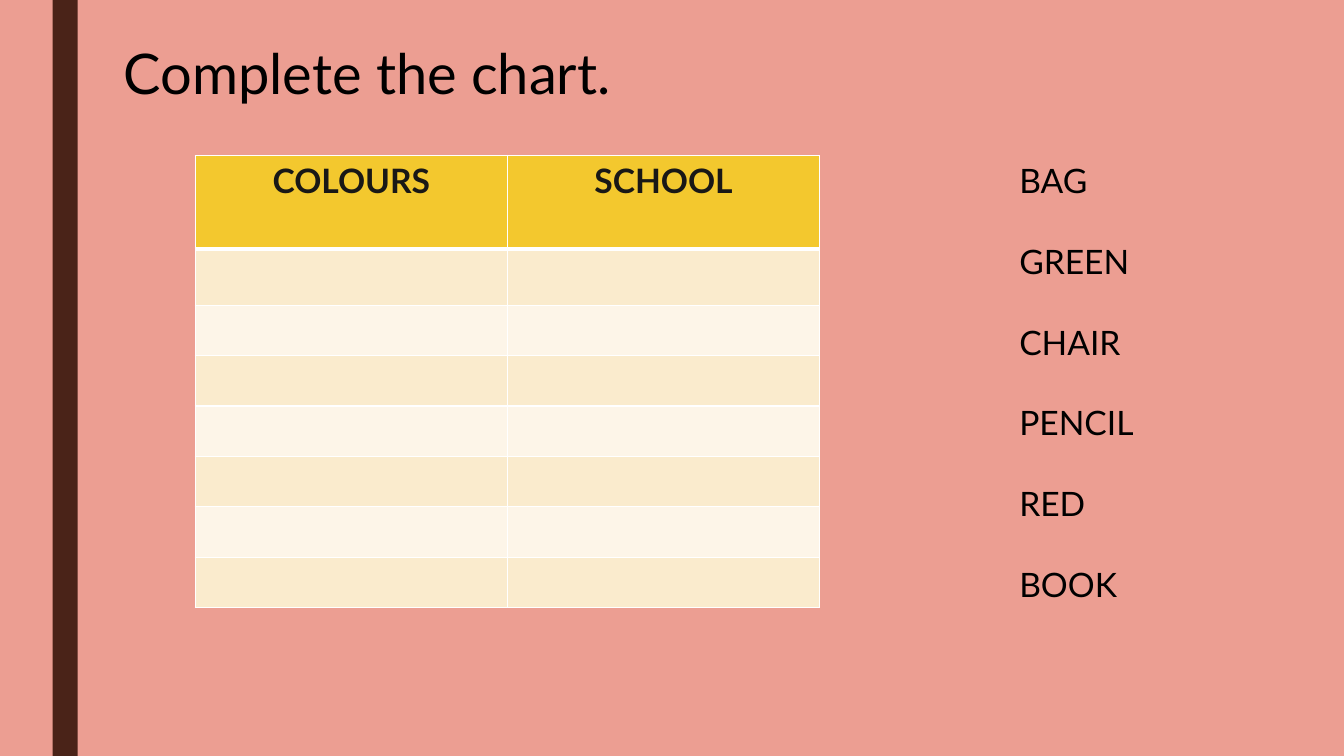
from dataclasses import dataclass

from lxml import etree
from pptx import Presentation
from pptx import util as u
from pptx.dml.color import RGBColor
from pptx.enum import shapes, text
from pptx.oxml.ns import qn

PINK = RGBColor(0xEC, 0x9E, 0x92)
BROWN = RGBColor(0x4A, 0x23, 0x18)
BLACK = RGBColor(0x00, 0x00, 0x00)
INK = RGBColor(0x19, 0x18, 0x16)
WHITE = RGBColor(0xFF, 0xFF, 0xFF)
YELLOW = RGBColor(0xF3, 0xC8, 0x2E)
BANDS = (RGBColor(0xFD, 0xF5, 0xE8), RGBColor(0xFA, 0xEB, 0xCD))

FONT = "Lato"
HEADINGS = ("COLOURS", "SCHOOL")
WORDS = ("BAG", "GREEN", "CHAIR", "PENCIL", "RED", "BOOK")
ROW_HEIGHTS = (67, 40) + (36,) * 6
COLUMN_WIDTH = 223


@dataclass(frozen=True)
class Box:
    left: float
    top: float
    width: float
    height: float

    def lengths(self) -> list:
        return [u.Pt(value) for value in (self.left, self.top, self.width, self.height)]


def write(frame, lines, *, size=24, colour=BLACK, bold=False,
          align=text.PP_ALIGN.LEFT, gap=0) -> None:
    """Put one paragraph per line into the frame, with a gap between them."""
    frame.word_wrap = True
    for index, line in enumerate(lines):
        paragraph = frame.add_paragraph() if index else frame.paragraphs[0]
        paragraph.alignment = align
        if index and gap:
            paragraph.space_before = u.Pt(gap)
        run = paragraph.add_run()
        run.text = line
        run.font.name = FONT
        run.font.size = u.Pt(size)
        run.font.bold = bold
        run.font.color.rgb = colour


def add_text(slide, box: Box, lines, **style) -> None:
    write(slide.shapes.add_textbox(*box.lengths()).text_frame, lines, **style)


def set_borders(cell, **widths: float) -> None:
    """Draw white cell borders; keywords L, R, T and B override one point."""
    properties = cell._tc.get_or_add_tcPr()
    for side in "LRTB":
        line = etree.SubElement(properties, qn(f"a:ln{side}"),
                                w=str(u.Pt(widths.get(side, 1))))
        fill = etree.SubElement(line, qn("a:solidFill"))
        etree.SubElement(fill, qn("a:srgbClr"), val=str(WHITE))


def add_chart_table(slide, left: float, top: float) -> None:
    box = Box(left, top, COLUMN_WIDTH * len(HEADINGS), sum(ROW_HEIGHTS))
    table = slide.shapes.add_table(len(ROW_HEIGHTS), len(HEADINGS), *box.lengths()).table
    for column in table.columns:
        column.width = u.Pt(COLUMN_WIDTH)
    for index, height in enumerate(ROW_HEIGHTS):
        table.rows[index].height = u.Pt(height)
        for cell in table.rows[index].cells:
            # The rule under the header is shared by the first two rows
            set_borders(cell, **{0: {"B": 3}, 1: {"T": 3}}.get(index, {}))
            cell.fill.solid()
            cell.fill.fore_color.rgb = BANDS[index % 2] if index else YELLOW
    for cell, heading in zip(table.rows[0].cells, HEADINGS):
        write(cell.text_frame, [heading], colour=INK, bold=True,
              align=text.PP_ALIGN.CENTER)


def main() -> None:
    presentation = Presentation()
    presentation.slide_width, presentation.slide_height = u.Pt(960), u.Pt(540)
    slide = presentation.slides.add_slide(presentation.slide_layouts[6])

    # Background and side stripe
    slide.background.fill.solid()
    slide.background.fill.fore_color.rgb = PINK
    stripe = slide.shapes.add_shape(shapes.MSO_SHAPE.RECTANGLE,
                                    *Box(37.5, 0, 18, 540).lengths())
    stripe.shadow.inherit = False
    stripe.fill.solid()
    stripe.fill.fore_color.rgb = BROWN
    stripe.line.fill.background()

    # Title, table and word list
    add_text(slide, Box(81.4, 24, 794, 55.5), ["Complete the chart."], size=40)
    add_chart_table(slide, 139.5, 111)
    add_text(slide, Box(721, 111, 274, 327), WORDS, gap=28.8)

    presentation.save("out.pptx")


if __name__ == "__main__":
    main()
